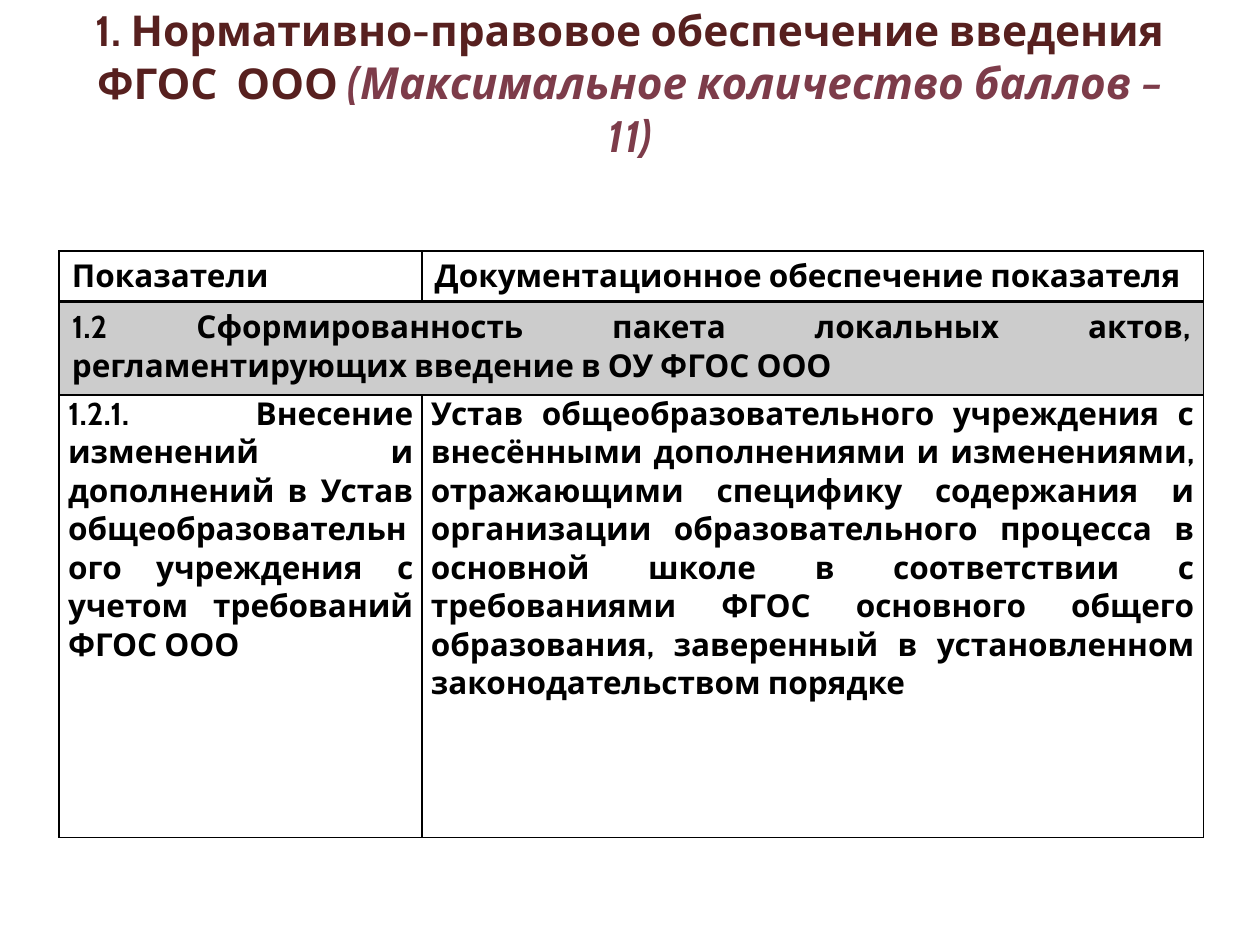
from dataclasses import dataclass

from lxml import etree
from pptx import Presentation
from pptx.dml.color import RGBColor
from pptx.enum.text import MSO_ANCHOR, MSO_AUTO_SIZE, PP_ALIGN
from pptx.oxml.ns import qn
from pptx.util import Inches, Pt

LEFT, CENTER, JUST = PP_ALIGN.LEFT, PP_ALIGN.CENTER, PP_ALIGN.JUSTIFY
MIDDLE, NO_FIT = MSO_ANCHOR.MIDDLE, MSO_AUTO_SIZE.NONE
FACE, BLACK, GRAY = "Cabin", "000000", "CCCCCC"
COLS = (2.88, 6.2)
ROWS = (0.4, 0.74, 3.51)


@dataclass
class Item:
    row: int
    col: int
    text: str
    align: PP_ALIGN = JUST
    fill: str = ""
    side: float = 0.1  # left and right margin
    edge: float = 0.05  # top and bottom margin


ITEMS = (
    Item(0, 0, "Показатели", LEFT),
    Item(0, 1, "Документационное обеспечение показателя", LEFT),
    Item(1, 0, "1.2 Сформированность пакета локальных актов, "
         "регламентирующих введение в ОУ ФГОС ООО", fill=GRAY),
    Item(2, 0, "1.2.1. Внесение изменений и дополнений в Устав "
         "общеобразовательного учреждения с учетом требований ФГОС ООО",
         side=0.07, edge=0),
    Item(2, 1, "Устав общеобразовательного учреждения с внесёнными "
         "дополнениями и изменениями, отражающими специфику содержания и "
         "организации образовательного процесса в основной школе в "
         "соответствии с требованиями ФГОС основного общего образования, "
         "заверенный в установленном законодательством порядке",
         side=0.07, edge=0),
)


def color(code: str) -> RGBColor:
    return RGBColor.from_string(code)


def style(font, size: float, code: str, slant: bool = False) -> None:
    font.name, font.size = FACE, Pt(size)
    font.bold, font.italic = True, slant
    font.color.rgb = color(code)


def border(cell, base: float) -> None:
    """Rule all four sides of a cell; base is the bottom width in points."""
    props = cell._tc.get_or_add_tcPr()
    for tag, width in (("lnL", 1), ("lnR", 1), ("lnT", 1), ("lnB", base)):
        line = etree.SubElement(props, qn(f"a:{tag}"), w=str(Pt(width)))
        fill = etree.SubElement(line, qn("a:solidFill"))
        etree.SubElement(fill, qn("a:srgbClr"), val=BLACK)


def write(grid, item: Item) -> None:
    cell = grid.cell(item.row, item.col)
    cell.margin_left = cell.margin_right = Inches(item.side)
    cell.margin_top = cell.margin_bottom = Inches(item.edge)
    if item.fill:
        cell.fill.solid()
        cell.fill.fore_color.rgb = color(item.fill)
    para = cell.text_frame.paragraphs[0]
    para.text = item.text
    para.alignment = item.align
    style(para.runs[0].font, 18, BLACK)


def add_title(slide) -> None:
    title = slide.shapes.title
    title.left, title.top = Inches(0.5), Inches(0.3)
    title.width, title.height = Inches(9), Inches(1.11)
    frame = title.text_frame
    frame.auto_size, frame.word_wrap = NO_FIT, True
    frame.vertical_anchor = MIDDLE
    frame.margin_bottom = Inches(0.45)  # lifts the heading
    para = frame.paragraphs[0]
    para.alignment = CENTER
    for text, size, code, slant in (
        ("1. Нормативно-правовое обеспечение введения ФГОС  ООО",
         24.3, "57201F", False),
        (" (Максимальное количество баллов – 11)", 25.2, "7D3C4A", True),
    ):
        run = para.add_run()
        run.text = text
        style(run.font, size, code, slant)


def add_grid(slide) -> None:
    grid = slide.shapes.add_table(
        len(ROWS), len(COLS), Inches(0.47), Inches(1.99),
        Inches(sum(COLS)), Inches(sum(ROWS))).table
    grid.first_row = grid.horz_banding = False
    for col, width in zip(grid.columns, COLS):
        col.width = Inches(width)
    for row, height in zip(grid.rows, ROWS):
        row.height = Inches(height)
    # Borders come before fills in the cell properties
    for i in range(len(ROWS)):
        for j in range(len(COLS)):
            cell = grid.cell(i, j)
            border(cell, 2 if i == 0 else 1)
            cell.fill.background()
    grid.cell(1, 0).merge(grid.cell(1, 1))
    for item in ITEMS:
        write(grid, item)


def main() -> None:
    deck = Presentation()
    deck.slide_width, deck.slide_height = Inches(10), Inches(7.5)
    slide = deck.slides.add_slide(deck.slide_layouts[5])  # title only
    add_title(slide)
    add_grid(slide)
    deck.save("out.pptx")


if __name__ == "__main__":
    main()
